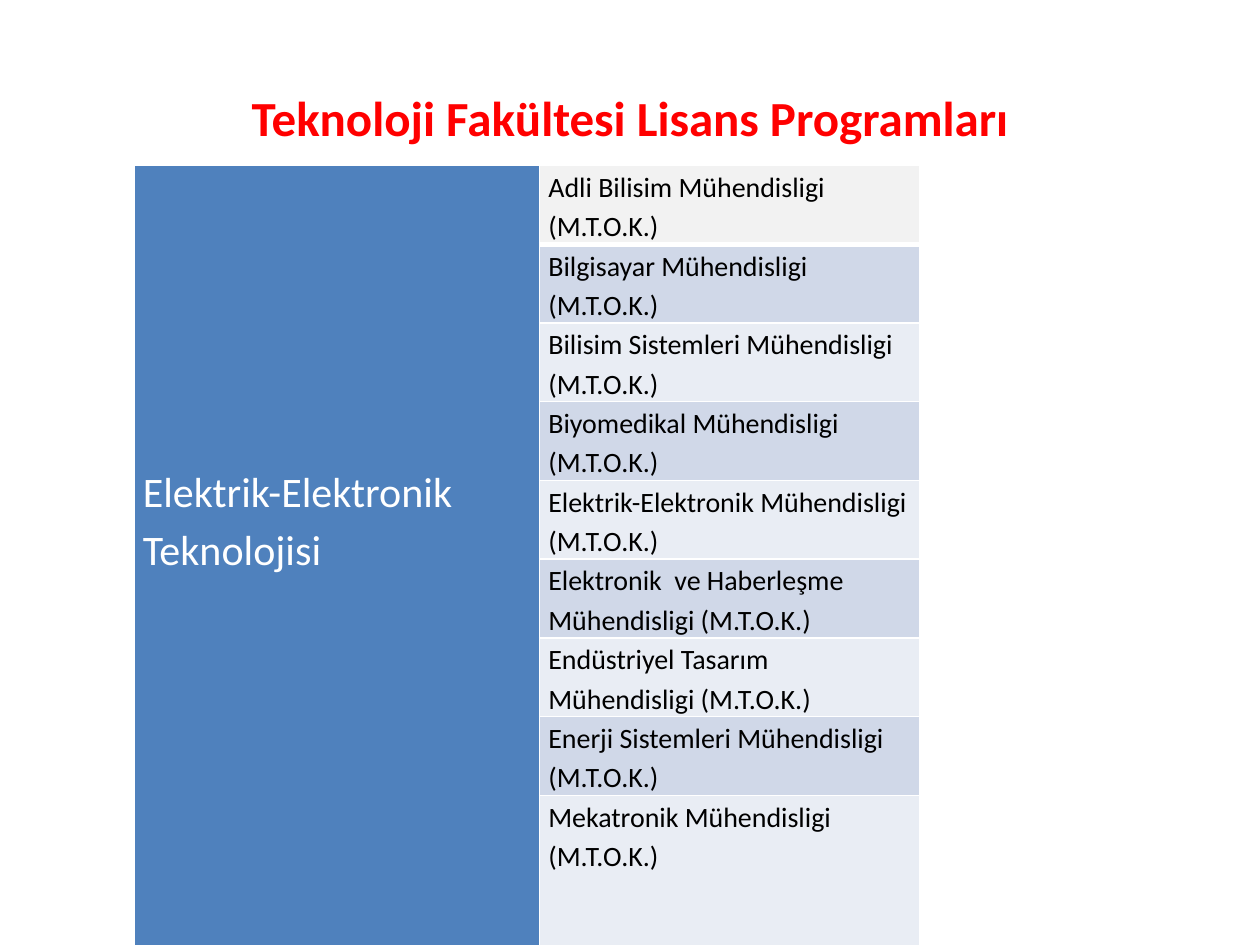
from lxml.etree import SubElement
from pptx import Presentation
from pptx.dml.color import RGBColor
from pptx.enum.text import MSO_ANCHOR as Anchor, PP_ALIGN as Align
from pptx.oxml.ns import qn
from pptx.util import Pt

FONT = "Calibri"
COLORS = {
    "title": "FF0000",
    "field": "4F81BD",
    "first": "F2F2F2",
    "dark": "D0D8E8",
    "light": "E9EDF4",
    "white": "FFFFFF",
    "black": "000000",
}
PROGRAMS = [
    "Adli Bilisim Mühendisligi",
    "Bilgisayar Mühendisligi",
    "Bilisim Sistemleri Mühendisligi",
    "Biyomedikal Mühendisligi",
    "Elektrik-Elektronik Mühendisligi",
    "Elektronik  ve Haberleşme Mühendisligi",
    "Endüstriyel Tasarım Mühendisligi",
    "Enerji Sistemleri Mühendisligi",
    "Mekatronik Mühendisligi",
]
ROW_HEIGHT, LAST_ROW_HEIGHT = 45, 85


def color(name):
    return RGBColor.from_string(COLORS[name])


def add_span(para, text, size, color_name, bold=False):
    span = para.add_run()
    span.text = text
    span.font.name = FONT
    span.font.size = Pt(size)
    span.font.bold = bold
    span.font.color.rgb = color(color_name)


def add_title(page, text):
    box = page.shapes.title
    box.left, box.top, box.width, box.height = Pt(36), Pt(21.6), Pt(648), Pt(90)
    box.text_frame.vertical_anchor = Anchor.MIDDLE
    para = box.text_frame.paragraphs[0]
    para.alignment = Align.CENTER
    add_span(para, text, 28, "title", bold=True)


def set_borders(cell, bottom=1):
    # Borders must come before the fill in the cell properties
    props = cell._tc.get_or_add_tcPr()
    for side, width in (("L", 1), ("R", 1), ("T", 1), ("B", bottom)):
        line = SubElement(props, qn(f"a:ln{side}"), w=str(Pt(width)))
        fill = SubElement(line, qn("a:solidFill"))
        SubElement(fill, qn("a:srgbClr"), val=COLORS["white"])


def fill_cell(cell, text, size, text_color, fill, top=0, bottom_border=1):
    set_borders(cell, bottom_border)
    cell.fill.solid()
    cell.fill.fore_color.rgb = color(fill)
    cell.margin_left = cell.margin_right = Pt(5)
    cell.margin_top, cell.margin_bottom = Pt(top), Pt(0)
    cell.vertical_anchor = Anchor.TOP
    para = cell.text_frame.paragraphs[0]
    para.line_spacing = 1.15
    add_span(para, text, size, text_color)


def add_program_table(page):
    count = len(PROGRAMS)
    height = ROW_HEIGHT * (count - 1) + LAST_ROW_HEIGHT
    table = page.shapes.add_table(
        count, 2, Pt(76.6), Pt(94.6), Pt(449.2), Pt(height)).table
    for column, width in zip(table.columns, (231.8, 217.4)):
        column.width = Pt(width)
    for row in table.rows:
        row.height = Pt(ROW_HEIGHT)
    table.rows[count - 1].height = Pt(LAST_ROW_HEIGHT)

    # Field of study, one cell beside all the programs
    field = table.cell(0, 0)
    field.merge(table.cell(count - 1, 0))
    fill_cell(field, "Elektrik-Elektronik Teknolojisi", 24, "white", "field",
              top=168, bottom_border=3)

    # Programs, in alternating bands below the first row
    for index, program in enumerate(PROGRAMS):
        band = "first" if index == 0 else ("light", "dark")[index % 2]
        fill_cell(table.cell(index, 1), f"{program} (M.T.O.K.)", 16, "black",
                  band, bottom_border=1 if index else 3)


def main():
    deck = Presentation()
    deck.slide_width, deck.slide_height = Pt(720), Pt(540)
    page = deck.slides.add_slide(deck.slide_layouts[5])
    add_title(page, "Teknoloji Fakültesi Lisans Programları")
    add_program_table(page)
    deck.save("out.pptx")


if __name__ == "__main__":
    main()
